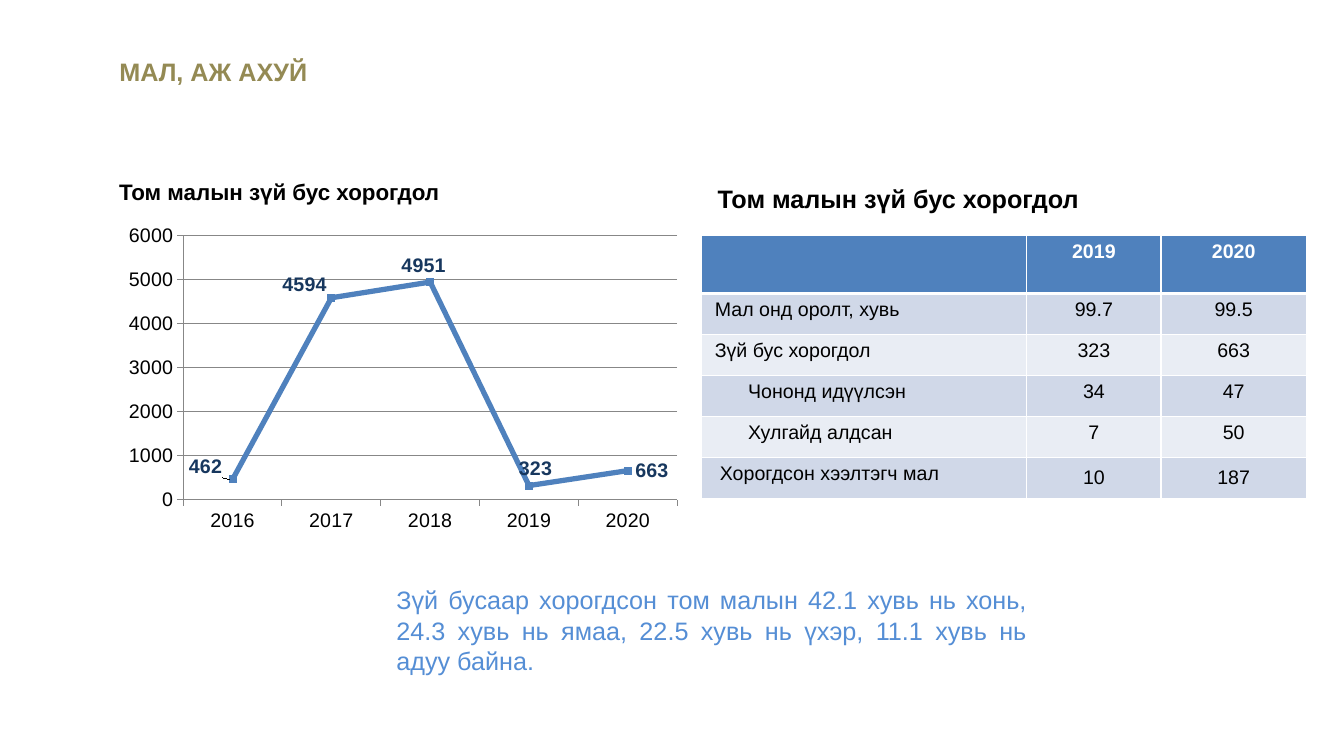
"""Build a livestock slide with a loss chart, a table and a closing remark."""
import pptx
import pptx.chart.data
import pptx.dml.color
import pptx.enum.chart
import pptx.enum.text
import pptx.oxml
import pptx.oxml.ns
import pptx.util

TITLE = "МАЛ, АЖ АХУЙ"
HEAD = "Том малын зүй бус хорогдол"
NOTE = ("Зүй бусаар хорогдсон том малын 42.1 хувь нь хонь, 24.3 хувь нь ямаа, "
        "22.5 хувь нь үхэр, 11.1 хувь нь адуу байна.")
LOSS = {"2016": 462, "2017": 4594, "2018": 4951, "2019": 323, "2020": 663}
LABELS = [("LEFT", -0.5, -4), ("LEFT", 0.5, -4.1), ("ABOVE", -1.15, 0.7),
          ("ABOVE", 1.15, 0.4), ("RIGHT", 0, 0)]
ROWS = [
    ("", "2019", "2020"),
    ("Мал онд оролт, хувь", "99.7", "99.5"),
    ("Зүй бус хорогдол", "323", "663"),
    ("Чононд идүүлсэн", "34", "47"),
    ("Хулгайд алдсан", "7", "50"),
    ("Хорогдсон хээлтэгч мал", "10", "187"),
]
INDENT = [0, 0, 0, 0.33, 0.33, 0.05]
COLS = [3.22, 1.33, 1.44]
HIGH = [0.58] + [0.41] * 5
COLOR = {"title": "948A54", "text": "000000", "white": "FFFFFF", "blue": "4F81BD",
         "odd": "D0D8E8", "even": "E9EDF4", "label": "17375E", "note": "558ED5",
         "grid": "878787"}
PLACE = {"title": (8.13, 6.75, 90, 5.33), "left": (8.13, 21.07, 44.2, 6.67),
         "right": (52.66, 22.27, 44.2, 6.67), "chart": (8.78, 28.93, 42.53, 42.27),
         "table": (52.21, 31.17, 45, 34.8), "note": (28.75, 76.67, 48.4, 13.47)}
PLOT = {"x": 11.4, "y": 5.4, "w": 86.45, "h": 82.6}

Inch, Pt = pptx.util.Inches, pptx.util.Pt
Anchor, Align = pptx.enum.text.MSO_ANCHOR, pptx.enum.text.PP_ALIGN
Spot = pptx.enum.chart.XL_LABEL_POSITION
NS = pptx.oxml.ns.nsdecls("c")
qn = pptx.oxml.ns.qn

deck = pptx.Presentation()
deck.slide_width, deck.slide_height = Inch(13.33), Inch(7.5)
slide = deck.slides.add_slide(deck.slide_layouts[5])


def area(name):
    x, y, w, h = PLACE[name]
    wide, high = deck.slide_width / 100, deck.slide_height / 100
    return [int(v) for v in (x * wide, y * high, w * wide, h * high)]


def apply(item, form):
    for key, val in form.items():
        setattr(item, key, val)


def rgb(name):
    return pptx.dml.color.RGBColor.from_string(COLOR[name])


def paint(item, name):
    item.fill.solid()
    item.fill.fore_color.rgb = rgb(name)


def style(font, size, color, bold=False):
    apply(font, {"name": "Arial", "size": Pt(size), "bold": bold})
    font.color.rgb = rgb(color)


def write(frame, text, size, color, bold=False, anchor=Anchor.TOP, align=Align.LEFT):
    apply(frame, {"text": text, "word_wrap": True, "vertical_anchor": anchor})
    para = frame.paragraphs[0]
    para.alignment = align
    style(para.runs[0].font if text else para.font, size, color, bold)


def layout(**parts):
    inner = ""
    if "w" in parts:
        inner = ('<c:layoutTarget val="inner"/>'
                 '<c:xMode val="edge"/><c:yMode val="edge"/>')
    body = "".join(f'<c:{k} val="{v / 100:.4f}"/>' for k, v in parts.items())
    return pptx.oxml.parse_xml(
        f"<c:layout {NS}><c:manualLayout>{inner}{body}</c:manualLayout></c:layout>")


def border(cell, head):
    props = cell._tc.get_or_add_tcPr()
    for spot, side in enumerate("LRTB"):
        width = Pt(3 if head and side == "B" else 1)
        line = pptx.oxml.parse_xml(
            f'<a:ln{side} {pptx.oxml.ns.nsdecls("a")} w="{width}"><a:solidFill>'
            f'<a:srgbClr val="{COLOR["white"]}"/></a:solidFill></a:ln{side}>')
        props.insert(spot, line)


def draw():
    data = pptx.chart.data.CategoryChartData()
    data.categories = list(LOSS)
    data.add_series("Series 1", list(LOSS.values()))
    kind = pptx.enum.chart.XL_CHART_TYPE.LINE_MARKERS
    chart = slide.shapes.add_chart(kind, *area("chart"), data).chart
    apply(chart, {"has_legend": False, "has_title": False})
    style(chart.font, 14, "text")
    plot = chart.plots[0]
    plot.vary_by_categories = False
    zone = chart._chartSpace.chart.plotArea
    for old in zone.findall(qn("c:layout")):
        zone.remove(old)
    zone.insert(0, layout(**PLOT))
    tick = pptx.enum.chart.XL_TICK_MARK.OUTSIDE
    for axis in (chart.category_axis, chart.value_axis):
        axis.major_tick_mark = tick
        style(axis.tick_labels.font, 14, "text")
        axis.format.line.color.rgb = rgb("grid")
    apply(chart.value_axis, {"minimum_scale": 0, "maximum_scale": 6000,
                             "major_unit": 1000, "has_major_gridlines": True})
    chart.value_axis.major_gridlines.format.line.color.rgb = rgb("grid")
    line = plot.series[0]
    line.smooth = False
    line.format.line.width = Pt(3.75)
    line.format.line.color.rgb = rgb("blue")
    apply(line.marker, {"style": pptx.enum.chart.XL_MARKER_STYLE.SQUARE, "size": 5})
    paint(line.marker.format, "blue")
    line.marker.format.line.color.rgb = rgb("blue")
    line.data_labels.show_value = True
    style(line.data_labels.font, 14, "label", True)
    for i, (spot, x, y) in enumerate(LABELS):
        label = line.points[i].data_label
        style(label.font, 14, "label", True)
        label.position = getattr(Spot, spot)
        if x or y:
            node = line.data_labels._element.findall(qn("c:dLbl"))[i]
            node.insert(1, layout(x=x, y=y))


def tabulate():
    x, y, w, h = area("table")
    table = slide.shapes.add_table(len(ROWS), len(COLS), x, y, w, h).table
    for col, part in zip(table.columns, COLS):
        col.width = int(w * part / sum(COLS))
    for r, row in enumerate(ROWS):
        table.rows[r].height = int(h * HIGH[r] / sum(HIGH))
        for c, text in enumerate(row):
            cell = table.cell(r, c)
            left = 0.13 + (INDENT[r] if c == 0 else 0)
            last = c > 0 and r == len(ROWS) - 1
            write(cell.text_frame, text, 14, "text" if r else "white", r == 0,
                  align=Align.CENTER if c else Align.LEFT)
            apply(cell, {"margin_left": Inch(left), "margin_right": Inch(0.13),
                         "margin_top": Inch(0.05), "margin_bottom": Inch(0.05),
                         "vertical_anchor": Anchor.MIDDLE if last else Anchor.TOP})
            paint(cell, ("odd" if r % 2 else "even") if r else "blue")
            border(cell, r == 0)


def main():
    title = slide.shapes.title
    apply(title, dict(zip(("left", "top", "width", "height"), area("title"))))
    paint(title, "white")
    write(title.text_frame, TITLE, 18, "title", True, Anchor.MIDDLE)
    for name, text, size, color, bold, anchor, align in (
            ("left", HEAD, 16, "text", True, Anchor.BOTTOM, Align.LEFT),
            ("right", HEAD, 18, "text", True, Anchor.BOTTOM, Align.LEFT),
            ("note", NOTE, 18, "note", False, Anchor.TOP, Align.JUSTIFY)):
        box = slide.shapes.add_textbox(*area(name))
        write(box.text_frame, text, size, color, bold, anchor, align)
    draw()
    tabulate()
    deck.save("out.pptx")


if __name__ == "__main__":
    main()
